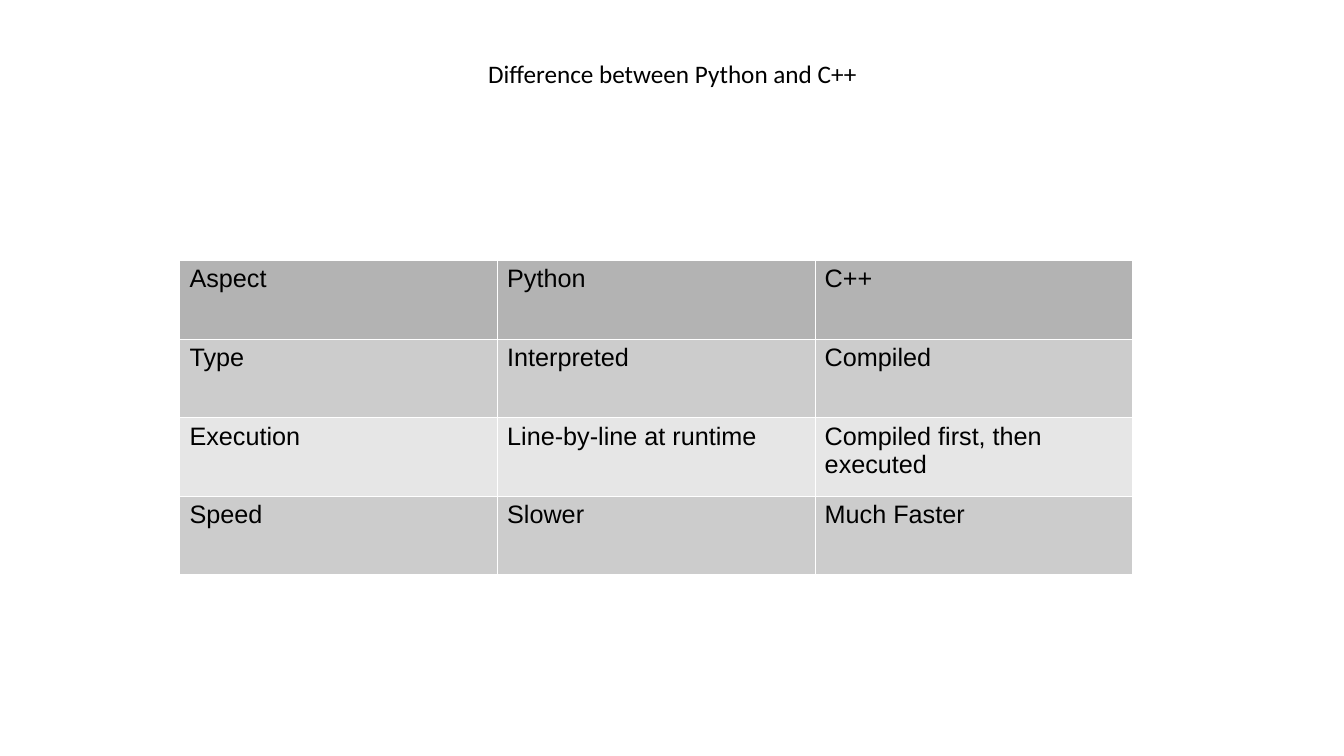
import pptx
import pptx.dml.color
import pptx.enum.text
import pptx.oxml
import pptx.oxml.ns
import pptx.util
from pptx.util import Inches

TITLE = "Difference between Python and C++"
COMPARISON = [
    ("Aspect", "Python", "C++"),
    ("Type", "Interpreted", "Compiled"),
    ("Execution", "Line-by-line at runtime", "Compiled first, then executed"),
    ("Speed", "Slower", "Much Faster"),
]
HEADER_FILL = "B3B3B3"
BAND_FILLS = ("CCCCCC", "E6E6E6")
TEXT_COLOR = "000000"
BORDER_COLOR = "FFFFFF"
BORDER_WIDTH = pptx.util.Pt(0.06)
COLUMN_WIDTH, ROW_HEIGHT = 3.15, 0.78


def color(hex_value):
    return pptx.dml.color.RGBColor.from_string(hex_value)


def add_run(paragraph, text, font):
    run = paragraph.add_run()
    run.text = text
    run.font.name = font
    run.font.size = pptx.util.Pt(18)
    run.font.color.rgb = color(TEXT_COLOR)


def add_borders(cell):
    properties = cell._tc.get_or_add_tcPr()
    for side in ("lnL", "lnR", "lnT", "lnB"):
        properties.append(pptx.oxml.parse_xml(
            f'<a:{side} {pptx.oxml.ns.nsdecls("a")} w="{BORDER_WIDTH}">'
            f'<a:solidFill><a:srgbClr val="{BORDER_COLOR}"/></a:solidFill>'
            f'</a:{side}>'))


def add_title(slide):
    title = slide.shapes.add_textbox(
        Inches(1.18), Inches(0.11), Inches(10.98), Inches(1.23))
    frame = title.text_frame
    frame.word_wrap = True
    frame.vertical_anchor = pptx.enum.text.MSO_ANCHOR.MIDDLE
    frame.margin_left = frame.margin_right = 0
    frame.margin_top = frame.margin_bottom = 0
    heading = frame.paragraphs[0]
    heading.alignment = pptx.enum.text.PP_ALIGN.CENTER
    add_run(heading, TITLE, "Calibri")


def add_comparison(slide):
    row_count, column_count = len(COMPARISON), len(COMPARISON[0])
    table = slide.shapes.add_table(
        row_count, column_count, Inches(1.78), Inches(2.58),
        Inches(COLUMN_WIDTH * column_count),
        Inches(ROW_HEIGHT * row_count)).table
    table.first_row = table.horz_banding = False
    for column in table.columns:
        column.width = Inches(COLUMN_WIDTH)
    for row_index, entries in enumerate(COMPARISON):
        table.rows[row_index].height = Inches(ROW_HEIGHT)
        fill = BAND_FILLS[(row_index - 1) % 2] if row_index else HEADER_FILL
        for column_index, entry in enumerate(entries):
            cell = table.cell(row_index, column_index)
            add_borders(cell)
            cell.fill.solid()
            cell.fill.fore_color.rgb = color(fill)
            add_run(cell.text_frame.paragraphs[0], entry, "Arial")


def main():
    deck = pptx.Presentation()
    deck.slide_width, deck.slide_height = Inches(13.33), Inches(7.5)
    slide = deck.slides.add_slide(deck.slide_layouts[6])
    add_title(slide)
    add_comparison(slide)
    deck.save("out.pptx")


if __name__ == "__main__":
    main()
